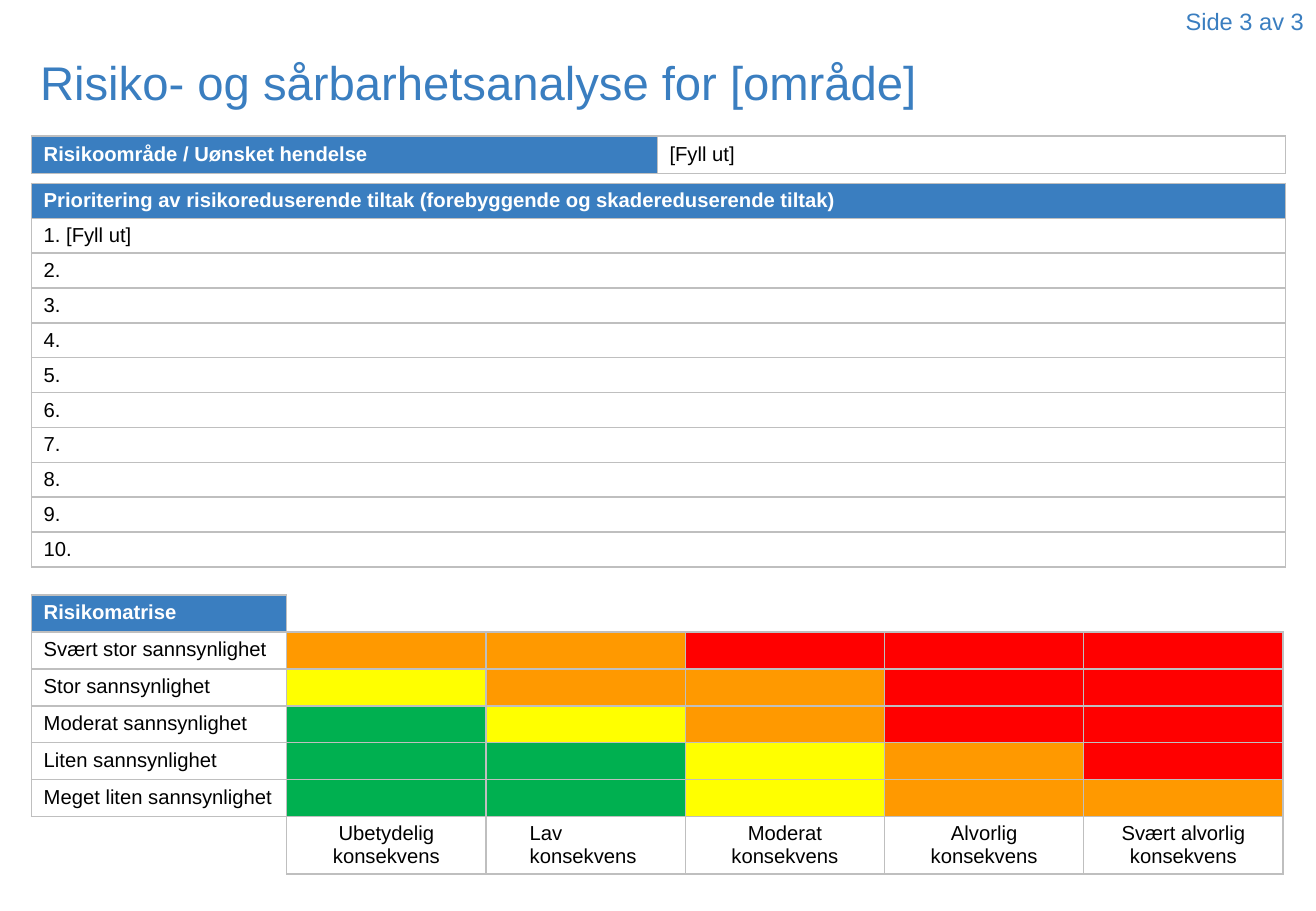
from dataclasses import dataclass

from lxml.etree import SubElement
from pptx import Presentation
from pptx.dml.color import RGBColor
from pptx.enum.text import MSO_ANCHOR, MSO_AUTO_SIZE, PP_ALIGN
from pptx.oxml.ns import qn
from pptx.util import Inches, Pt


@dataclass(frozen=True)
class Theme:
    font: str = "Arial"
    title_size: int = 28
    page_size: int = 14
    table_size: int = 12
    blue: str = "3A7EC0"
    white: str = "FFFFFF"
    black: str = "000000"
    border: str = "BFBFBF"
    green: str = "00B050"
    yellow: str = "FFFF00"
    orange: str = "FF9900"
    red: str = "FF0000"


THEME = Theme()
NO_GRID_STYLE = "{2D5ABB26-0587-4C30-8999-92F81FD0307C}"
LEFT, ROW_HEIGHT = 0.26, 0.28


def write_text(tf, text, size=THEME.table_size, color=THEME.black,
               bold=False, align=PP_ALIGN.LEFT):
    p = tf.paragraphs[0]
    p.alignment = align
    if not text:
        # An empty cell still takes its row height from this size.
        SubElement(p._p, qn("a:endParaRPr"), sz=str(size * 100))
        return
    r = p.add_run()
    r.text = text
    r.font.name = THEME.font
    r.font.size = Pt(size)
    r.font.bold = bold
    r.font.color.rgb = RGBColor.from_string(color)


def add_grid(top, widths, heights, rows, anchor, open_cells=None):
    """Add a table; rows hold (text, fill, format) and open_cells maps a cell to its only bordered sides."""
    frame = slide.shapes.add_table(
        len(heights), len(widths), Inches(LEFT), Inches(top),
        Inches(sum(widths)), Inches(sum(heights)))
    table = frame.table
    table.first_row = table.horz_banding = False
    table._tbl.tblPr.find(qn("a:tableStyleId")).text = NO_GRID_STYLE
    for column, width in zip(table.columns, widths):
        column.width = Inches(width)
    for row, height in zip(table.rows, heights):
        row.height = Inches(height)
    for i, row in enumerate(rows):
        for j, (text, fill, fmt) in enumerate(row):
            cell = table.cell(i, j)
            cell.vertical_anchor = anchor
            tcPr = cell._tc.get_or_add_tcPr()
            sides = (open_cells or {}).get((i, j), "LRTB")
            for side in "LRTB":
                ln = SubElement(tcPr, qn(f"a:ln{side}"), w=str(Pt(1)))
                if side in sides:
                    line_fill = SubElement(ln, qn("a:solidFill"))
                    SubElement(line_fill, qn("a:srgbClr"), val=THEME.border)
                else:
                    SubElement(ln, qn("a:noFill"))
            cell.fill.solid()
            cell.fill.fore_color.rgb = RGBColor.from_string(fill)
            write_text(cell.text_frame, text, **fmt)
    return table


prs = Presentation()
prs.slide_width, prs.slide_height = Inches(10.83), Inches(7.5)
slide = prs.slides.add_slide(prs.slide_layouts[5])

title = slide.shapes.title
title.left, title.top = Inches(0.23), Inches(0.37)
title.width, title.height = Inches(10.39), Inches(0.61)
title.text_frame.auto_size = MSO_AUTO_SIZE.NONE
title.text_frame.vertical_anchor = MSO_ANCHOR.MIDDLE
write_text(title.text_frame, "Risiko- og sårbarhetsanalyse for [område]",
           size=THEME.title_size, color=THEME.blue)

heading = dict(color=THEME.white, bold=True)

# Risk area
add_grid(1.12, [5.15, 5.17], [0.31], [[
    ("Risikoområde / Uønsket hendelse", THEME.blue, heading),
    ("[Fyll ut]", THEME.white, {}),
]], MSO_ANCHOR.MIDDLE)

# Prioritised measures
measures = ["1. [Fyll ut]"] + [f"{n}." for n in range(2, 11)]
measure_rows = [[("Prioritering av risikoreduserende tiltak "
                  "(forebyggende og skadereduserende tiltak)",
                  THEME.blue, heading)]]
measure_rows += [[(measure, THEME.white, {})] for measure in measures]
add_grid(1.51, [10.32], [ROW_HEIGHT] * len(measure_rows), measure_rows,
         MSO_ANCHOR.MIDDLE)

# Risk matrix: one letter for the colour of each consequence
levels = {"G": THEME.green, "Y": THEME.yellow,
          "O": THEME.orange, "R": THEME.red}
likelihoods = [
    ("Svært stor sannsynlighet", "OORRR"),
    ("Stor sannsynlighet", "YOORR"),
    ("Moderat sannsynlighet", "GYORR"),
    ("Liten sannsynlighet", "GGYOR"),
    ("Meget liten sannsynlighet", "GGYOO"),
]
consequences = ["Ubetydelig", "Lav", "Moderat", "Alvorlig", "Svært alvorlig"]
empty = ("", THEME.white, {})

matrix_rows = [[("Risikomatrise", THEME.blue, heading)] + [empty] * 5]
for likelihood, risks in likelihoods:
    matrix_rows.append([(likelihood, THEME.white, {})]
                       + [("", levels[risk], {}) for risk in risks])
matrix_rows.append([empty] + [
    (f"{name} konsekvens", THEME.white,
     dict(align=PP_ALIGN.LEFT if name == "Lav" else PP_ALIGN.CENTER))
    for name in consequences])

open_cells = {(0, j): "LB" if j == 1 else "B" for j in range(1, 6)}
open_cells[6, 0] = "TR"
matrix = add_grid(4.9, [2.1] + [1.64] * 5, [ROW_HEIGHT] * 6 + [0.47],
                  matrix_rows, MSO_ANCHOR.TOP, open_cells)
matrix.cell(0, 1).merge(matrix.cell(0, 5))
low = matrix.cell(6, 2)
low.margin_left, low.margin_right = Inches(0.36), Inches(0.3)

# Page number
page = slide.shapes.add_textbox(Inches(9.19), Inches(0.01),
                                Inches(1.64), Inches(0.57))
page.text_frame.word_wrap = True
write_text(page.text_frame, "Side 3 av 3", size=THEME.page_size,
           color=THEME.blue, align=PP_ALIGN.RIGHT)

prs.save("out.pptx")
